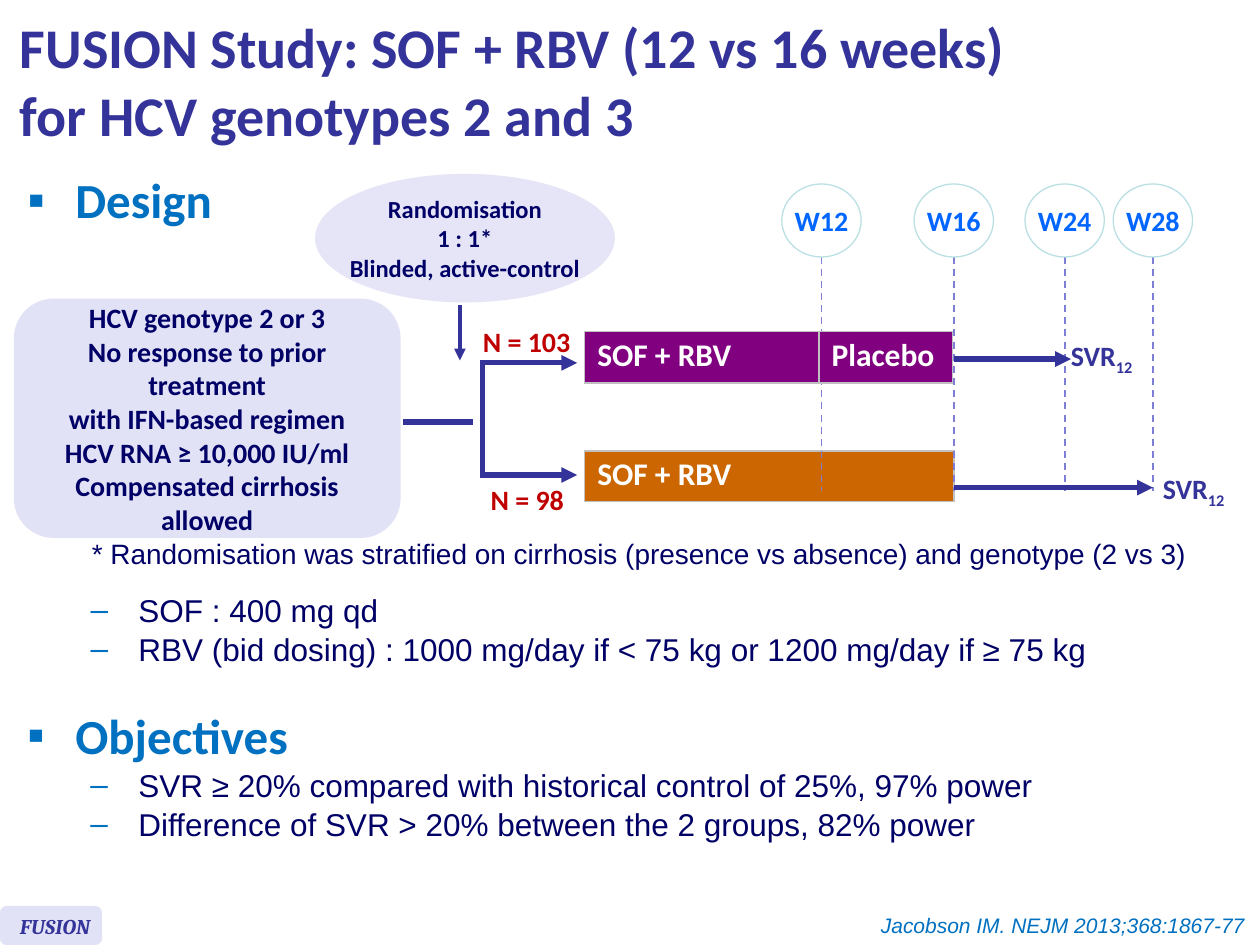
from dataclasses import dataclass
from typing import Any

from lxml import etree
from pptx import Presentation
from pptx.dml.color import RGBColor
from pptx.enum.dml import MSO_LINE
from pptx.enum.shapes import MSO_CONNECTOR, MSO_SHAPE
from pptx.enum.text import MSO_ANCHOR, PP_ALIGN
from pptx.oxml.ns import qn
from pptx.util import Inches, Pt

LEFT, MID, RIGHT = PP_ALIGN.LEFT, PP_ALIGN.CENTER, PP_ALIGN.RIGHT
TOP, CENTRE = MSO_ANCHOR.TOP, MSO_ANCHOR.MIDDLE
OVAL, ROUND = MSO_SHAPE.OVAL, MSO_SHAPE.ROUNDED_RECTANGLE
DASH, STRAIGHT = MSO_LINE.DASH, MSO_CONNECTOR.STRAIGHT

COLORS = {
    "navy": "000066", "indigo": "333399", "sky": "0070C0", "week": "0066FF",
    "red": "C00000", "white": "FFFFFF", "pale": "E2E2F6", "haze": "E5E5F7",
    "ring": "BBE0E3", "guide": "7E7ED4", "edge": "C0C0C0",
    "purple": "800080", "orange": "CC6600",
}


def color(name):
    return RGBColor.from_string(COLORS[name])


def child(node, tag, **attrs):
    return etree.SubElement(node, qn(tag), **attrs)


@dataclass
class Board:
    slide: Any
    cell: float = 0.1
    face: str = "Calibri"
    ink: str = "navy"

    def unit(self, *cells):
        return [Inches(n * self.cell) for n in cells]

    def font(self, para, size, ink=None, face=None, bold=True, slant=False):
        font = para.font
        font.size, font.bold, font.italic = Pt(size), bold, slant
        font.name = face or self.face
        font.color.rgb = color(ink or self.ink)

    def lines(self, frame, lines, align=LEFT, anchor=TOP, wrap=True, **style):
        frame.word_wrap, frame.vertical_anchor = wrap, anchor
        for i, line in enumerate(lines):
            para = frame.paragraphs[0] if i == 0 else frame.add_paragraph()
            para.text, para.alignment = line, align
            self.font(para, **style)

    def text(self, box, *lines, **style):
        shape = self.slide.shapes.add_textbox(*self.unit(*box))
        self.lines(shape.text_frame, lines, **style)
        return shape.text_frame

    def bullets(self, box, items):
        frame = self.slide.shapes.add_textbox(*self.unit(*box)).text_frame
        frame.word_wrap = True
        for i, (level, line) in enumerate(items):
            para = frame.paragraphs[0] if i == 0 else frame.add_paragraph()
            para.text, para.level = line, level
            props = para._p.get_or_add_pPr()
            props.set("marL", str(Inches(0.38 + level * 0.5)))
            props.set("indent", str(-Inches(0.38)))
            if i:
                para.space_before = Pt(0.7)
            child(child(props, "a:buClr"), "a:srgbClr", val=COLORS["sky"])
            child(props, "a:buFont", typeface="Arial")
            child(props, "a:buChar", char="▪–"[level])
            if level:
                self.font(para, 18, face="Arial", bold=False)
            else:
                self.font(para, 28, "sky")

    def shape(self, kind, box, fill, *lines, line=None, **style):
        shape = self.slide.shapes.add_shape(kind, *self.unit(*box))
        shape.shadow.inherit = False
        shape.fill.solid()
        shape.fill.fore_color.rgb = color(fill)
        if line:
            shape.line.color.rgb, shape.line.width = color(line), Pt(0.75)
        else:
            shape.line.fill.background()
        if lines:
            self.lines(shape.text_frame, lines, MID, CENTRE, **style)

    def line(self, x1, y1, x2, y2, ink="indigo", width=3, dash=None, tip=False):
        link = self.slide.shapes.add_connector(STRAIGHT, *self.unit(x1, y1, x2, y2))
        link.line.color.rgb, link.line.width = color(ink), Pt(width)
        if dash:
            link.line.dash_style = dash
        if tip:
            child(link.line._get_or_add_ln(), "a:tailEnd", type="triangle")
        child(link._element.spPr, "a:effectLst")

    def fork(self, left, right, top, low):
        form = self.slide.shapes.build_freeform(*self.unit(right, top))
        points = [(left, top), (left, low), (right, low)]
        form.add_line_segments([self.unit(*p) for p in points], close=False)
        shape = form.convert_to_shape()
        shape.shadow.inherit = False
        shape.fill.background()
        shape.line.color.rgb, shape.line.width = color("indigo"), Pt(3)
        edge = shape.line._get_or_add_ln()
        child(edge, "a:miter", lim="800000")
        for end in ("a:headEnd", "a:tailEnd"):
            child(edge, end, type="triangle")

    def bar(self, box, fill, label):
        table = self.slide.shapes.add_table(1, 1, *self.unit(*box)).table
        table.first_row = table.horz_banding = False
        cell = table.cell(0, 0)
        self.lines(cell.text_frame, [label], size=18, ink="white")
        cell.text_frame.paragraphs[0].line_spacing = 0.8
        cell.vertical_anchor = CENTRE
        props = cell._tc.get_or_add_tcPr()
        for side in ("a:lnL", "a:lnR", "a:lnT", "a:lnB"):
            edge = child(props, side, w=str(Pt(1)))
            child(child(edge, "a:solidFill"), "a:srgbClr", val=COLORS["edge"])
        cell.fill.solid()
        cell.fill.fore_color.rgb = color(fill)

    def week(self, x, label):
        self.line(x, 19.4, x, 39, "guide", 1, DASH)
        self.shape(OVAL, (x - 3.15, 14.6, 6.3, 5.8), "white", label,
                   line="ring", wrap=False, size=16, ink="week")

    def result(self, x, y):
        frame = self.text((x, y, 7.2, 3.7), "SVR", wrap=False, size=16, ink="indigo")
        run = frame.paragraphs[0].add_run()
        run.text = "12"
        run._r.get_or_add_rPr().set("baseline", "-25000")


def main():
    deck = Presentation()
    deck.slide_width, deck.slide_height = Inches(10), Inches(7.5)
    board = Board(deck.slides.add_slide(deck.slide_layouts[6]))

    board.shape(ROUND, (0, 71.9, 8.1, 3.1), "pale")
    board.text((0.6, 72, 8.8, 3), "FUSION", size=12, ink="indigo",
               face="Cambria", slant=True)
    board.text((0.6, 0.3, 95.5, 12.1),
               "FUSION Study: SOF + RBV (12 vs 16 weeks)\nfor HCV genotypes 2 and 3",
               anchor=CENTRE, size=32, ink="indigo")

    board.bullets((1.2, 13, 19.8, 6.3), [(0, "Design")])
    board.bullets((1.2, 46.4, 96.1, 7.2), [
        (1, "SOF : 400 mg qd"),
        (1, "RBV (bid dosing) : 1000 mg/day if < 75 kg or 1200 mg/day if ≥ 75 kg"),
    ])
    board.bullets((1.2, 55.5, 97.6, 13.1), [
        (0, "Objectives"),
        (1, "SVR ≥ 20% compared with historical control of 25%, 97% power"),
        (1, "Difference of SVR > 20% between the 2 groups, 82% power"),
    ])

    board.shape(OVAL, (25, 13.8, 23.8, 10.2), "haze", "Randomisation", "1 : 1*",
                "Blinded, active-control", wrap=False, size=14)
    board.shape(ROUND, (1.1, 23.7, 30.7, 19), "pale", "HCV genotype 2 or 3",
                "No response to prior treatment", "with IFN-based regimen",
                "HCV RNA ≥ 10,000 IU/ml", "Compensated cirrhosis", "allowed", size=16)
    board.text((6.3, 42.1, 89.8, 3.7),
               "* Randomisation was stratified on cirrhosis (presence vs absence)"
               " and genotype (2 vs 3)", size=16, face="Arial", bold=False)

    board.line(36.5, 24.2, 36.5, 28.6, width=2.25, tip=True)
    board.line(32, 33.5, 37.5, 33.5)
    board.fork(38.3, 45.8, 28.8, 37.7)
    board.text((37.3, 25.3, 9, 3.7), "N = 103", align=MID, wrap=False, size=16, ink="red")
    board.text((37.9, 37.8, 7.9, 3.7), "N = 98", align=MID, wrap=False, size=16, ink="red")

    board.bar((46.4, 26.3, 18.9, 4.1), "purple", "SOF + RBV")
    board.bar((46.4, 35.8, 29.3, 4), "orange", "SOF + RBV")
    for x, label in ((65.2, "W12"), (75.7, "W16"), (84.5, "W24"), (91.5, "W28")):
        board.week(x, label)
    board.bar((65, 26.3, 10.6, 4.1), "purple", "Placebo")

    for x, y, left, top in ((85, 28.5, 84, 26.4), (91.5, 38.7, 91.3, 36.9)):
        board.line(75.7, y, x, y, tip=True)
        board.result(left, top)

    board.text((61.7, 71.9, 38.1, 3), "Jacobson IM. NEJM 2013;368:1867-77", align=RIGHT,
               size=12, ink="sky", face="Arial", bold=False, slant=True)
    deck.save("out.pptx")


if __name__ == "__main__":
    main()
